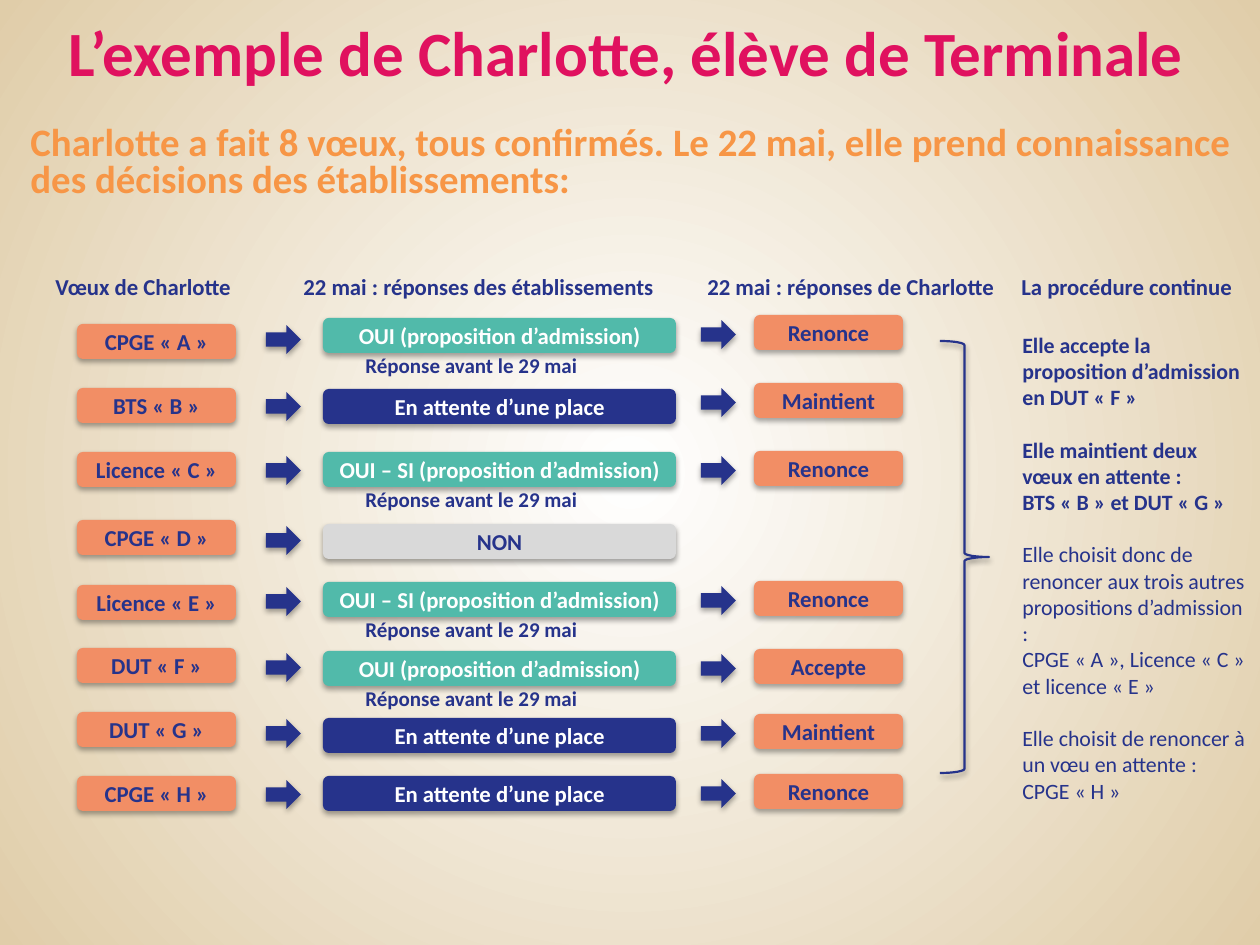
from lxml.etree import SubElement
from pptx import Presentation
from pptx.dml.color import RGBColor
from pptx.enum.shapes import MSO_SHAPE
from pptx.enum.text import MSO_ANCHOR, PP_ALIGN
from pptx.oxml.ns import qn
from pptx.util import Pt

SCALE = 914400 / 126
HUES = {
    "pink": "E0115F", "orange": "F79646", "navy": "26338B", "teal": "51BAAA",
    "coral": "F28E65", "grey": "D9D9D9", "white": "FFFFFF", "sand": "E0CDA9",
    "black": "000000",
}
NOTE = "Réponse avant le 29 mai"
YES = "OUI (proposition d’admission)"
YES_IF = "OUI – SI (proposition d’admission)"
WAIT = "En attente d’une place"
NO = "NON"

# answer: fill, font colour, has a deadline
LOOKS = {
    YES: ("teal", "white", True),
    YES_IF: ("teal", "white", True),
    WAIT: ("navy", "white", False),
    NO: ("grey", "navy", False),
}
# wish and its top, answer and its top, reply and its top
ROWS = [
    ("CPGE « A »", 324, YES, 318, "Renonce", 315),
    ("BTS « B »", 388, WAIT, 389, "Maintient", 383),
    ("Licence « C »", 452, YES_IF, 452, "Renonce", 451),
    ("CPGE « D »", 520, NO, 524, None, None),
    ("Licence « E »", 585, YES_IF, 582, "Renonce", 581),
    ("DUT « F »", 648, YES, 651, "Accepte", 649),
    ("DUT « G »", 712, WAIT, 718, "Maintient", 714),
    ("CPGE « H »", 776, WAIT, 776, "Renonce", 774),
]
HEADS = [
    ("Vœux de Charlotte", 43, 268),
    ("22 mai : réponses des établissements", 291, 397),
    ("22 mai : réponses de Charlotte", 695, 318),
    ("La procédure continue", 1009, 238),
]
# text, bold, starts a new block
STEPS = [
    ("Elle accepte la proposition d’admission en DUT « F »", True, False),
    ("Elle maintient deux vœux en attente :", True, True),
    ("BTS « B » et DUT « G »", True, False),
    ("Elle choisit donc de renoncer aux trois autres propositions d’admission :",
     False, True),
    ("CPGE « A », Licence « C » et licence « E »", False, False),
    ("Elle choisit de renoncer à un vœu en attente :", False, True),
    ("CPGE « H »", False, False),
]


def px(*sizes):
    return [round(size * SCALE) for size in sizes]


def rgb(hue):
    return RGBColor.from_string(HUES[hue])


class Deck:
    def __init__(self):
        self.font = "Calibri"
        self.file = Presentation()
        self.file.slide_width, self.file.slide_height = px(1260, 945)
        self.slide = self.file.slides.add_slide(self.file.slide_layouts[6])

    def glow(self, inner, outer):
        """Fill the background with a round gradient."""
        fill = self.slide.background.fill
        fill.gradient()
        for stop, hue in zip(fill.gradient_stops, (inner, outer)):
            stop.color.rgb = rgb(hue)
        grad = self.slide.element.find(".//" + qn("a:gradFill"))
        grad.remove(grad.find(qn("a:lin")))
        ring = SubElement(grad, qn("a:path"), path="circle")
        SubElement(ring, qn("a:fillToRect"), {side: "50000" for side in "ltrb"})

    def style(self, para, size, hue, bold=True, align=PP_ALIGN.LEFT):
        para.alignment = align
        for run in para.runs:
            font = run.font
            font.name, font.size, font.bold = self.font, Pt(size), bold
            font.color.rgb = rgb(hue)

    def text(self, words, box, size, hue, align=PP_ALIGN.LEFT):
        frame = self.slide.shapes.add_textbox(*px(*box)).text_frame
        frame.word_wrap = True
        frame.text = words
        self.style(frame.paragraphs[0], size, hue, align=align)
        return frame

    def steps(self, items, box, size, hue, gap):
        frame = self.text("", box, size, hue)
        for i, (words, bold, fresh) in enumerate(items):
            para = frame.add_paragraph() if i else frame.paragraphs[0]
            para.text = words
            para.space_before = Pt(gap if fresh else 0)
            self.style(para, size, hue, bold)

    def shape(self, kind, box, dist=23000, alpha=35000):
        """Add a shape with a soft shadow below it."""
        shape = self.slide.shapes.add_shape(kind, *px(*box))
        shape.shadow.inherit = False
        glow = SubElement(
            shape.element.spPr.find(qn("a:effectLst")), qn("a:outerShdw"),
            blurRad="40000", dist=str(dist), dir="5400000", rotWithShape="0")
        tint = SubElement(glow, qn("a:srgbClr"), val=HUES["black"])
        SubElement(tint, qn("a:alpha"), val=str(alpha))
        return shape

    def solid(self, kind, box, hue):
        shape = self.shape(kind, box)
        shape.fill.solid()
        shape.fill.fore_color.rgb = rgb(hue)
        shape.line.fill.background()
        return shape

    def label(self, words, left, top, width, fill, hue="navy"):
        box = (left, top, width, 35)
        frame = self.solid(MSO_SHAPE.ROUNDED_RECTANGLE, box, fill).text_frame
        frame.text = words
        frame.vertical_anchor = MSO_ANCHOR.MIDDLE
        self.style(frame.paragraphs[0], 13, hue, align=PP_ALIGN.CENTER)

    def arrow(self, left, top):
        self.solid(MSO_SHAPE.RIGHT_ARROW, (left, top, 35, 29), "navy")

    def brace(self, box, hue):
        shape = self.shape(MSO_SHAPE.RIGHT_BRACE, box, 20000, 38000)
        shape.fill.background()
        shape.line.color.rgb = rgb(hue)
        shape.line.width = Pt(1.25)


def main():
    deck = Deck()
    deck.glow("white", "sand")
    title = deck.text("L’exemple de Charlotte, élève de Terminale",
                      (5, 11, 1242, 81), 36, "pink", PP_ALIGN.CENTER)
    title.vertical_anchor = MSO_ANCHOR.MIDDLE
    intro = deck.text(
        "Charlotte a fait 8 vœux, tous confirmés. Le 22 mai, elle prend "
        "connaissance des décisions des établissements:",
        (18, 120, 1231, 98), 22.2, "orange")
    intro.paragraphs[0].line_spacing = 0.8

    for words, left, width in HEADS:
        deck.text(words, (left, 267, width, 40), 13, "navy")

    for wish, wish_top, answer, top, reply, reply_top in ROWS:
        fill, hue, due = LOOKS[answer]
        deck.label(wish, 77, wish_top, 159, "coral")
        deck.arrow(266, (wish_top + top) // 2 + 4)
        deck.label(answer, 323, top, 353, fill, hue)
        if due:
            deck.text(NOTE, (353, top + 28, 268, 38), 12, "navy")
        if reply:
            deck.arrow(701, reply_top + 5)
            deck.label(reply, 754, reply_top, 149, "coral")

    deck.brace((940, 341, 49, 432), "navy")
    deck.steps(STEPS, (1010, 325, 249, 501), 12.5, "navy", 15)
    deck.file.save("out.pptx")


if __name__ == "__main__":
    main()
